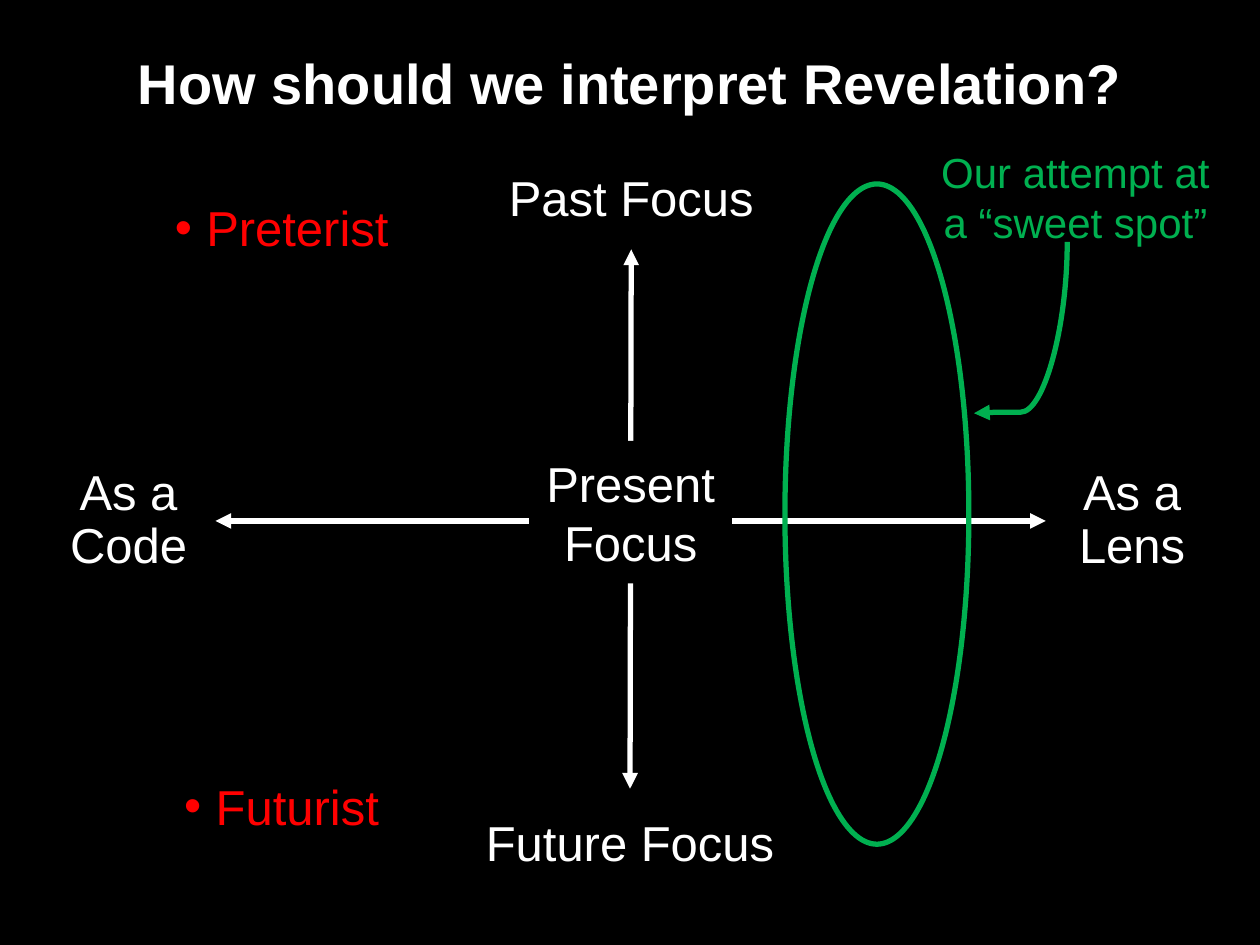
from dataclasses import dataclass

from lxml.etree import SubElement
from pptx import Presentation
from pptx.dml.color import RGBColor
from pptx.enum.shapes import MSO_CONNECTOR, MSO_SHAPE
from pptx.enum.text import MSO_ANCHOR, PP_ALIGN
from pptx.oxml.ns import qn
from pptx.util import Inches, Pt


@dataclass(frozen=True)
class Theme:
    font: str = "Arial"
    background: RGBColor = RGBColor(0, 0, 0)
    text: RGBColor = RGBColor(255, 255, 255)
    view: RGBColor = RGBColor(255, 0, 0)
    highlight: RGBColor = RGBColor(0, 0xB0, 0x50)
    title_size: Pt = Pt(32)
    label_size: Pt = Pt(28)
    note_size: Pt = Pt(24)
    line_width: Pt = Pt(3)


theme = Theme()


def write(shape, text, color=theme.text, size=theme.label_size, bold=False,
          line_spacing=None, space_after=Pt(6), bullet=False):
    frame = shape.text_frame
    frame.word_wrap = True
    frame.vertical_anchor = MSO_ANCHOR.MIDDLE
    paragraph = frame.paragraphs[0]
    paragraph.alignment = PP_ALIGN.CENTER
    paragraph.line_spacing = line_spacing
    paragraph.space_after = space_after
    if bullet:
        properties = paragraph._p.get_or_add_pPr()
        properties.set("marL", str(Inches(0.25)))
        properties.set("indent", str(Inches(-0.25)))
        SubElement(properties, qn("a:buFont"), typeface=theme.font)
        SubElement(properties, qn("a:buChar"), char="•")
    run = paragraph.add_run()
    run.text = text
    run.font.name = theme.font
    run.font.size = size
    run.font.bold = bold
    run.font.color.rgb = color


def style_arrow(connector, color, ends):
    connector.line.color.rgb = color
    connector.line.width = theme.line_width
    line = connector.line._get_or_add_ln()
    for end in ends:
        SubElement(line, qn(f"a:{end}"), type="triangle")
    SubElement(connector._element.spPr, qn("a:effectLst"))


presentation = Presentation()
presentation.slide_width = Inches(10)
presentation.slide_height = Inches(7.5)
slide = presentation.slides.add_slide(presentation.slide_layouts[6])
slide.background.fill.solid()
slide.background.fill.fore_color.rgb = theme.background
shapes = slide.shapes

title = shapes.add_textbox(Inches(0.69), Inches(0.24), Inches(8.62), Inches(0.89))
write(title, "How should we interpret Revelation?", size=theme.title_size,
      bold=True, line_spacing=0.9, space_after=Pt(0))

axis_labels = {}
for text, left, top, width, height, line_spacing in [
    ("As a Code", 0.33, 3.62, 1.38, 1.03, 0.9),
    ("As a Lens", 8.3, 3.62, 1.37, 1.03, 0.9),
    ("Future Focus", 3.53, 6.26, 2.94, 0.84, None),
    ("Past Focus", 3.54, 1.14, 2.94, 0.84, None),
]:
    label = shapes.add_textbox(Inches(left), Inches(top), Inches(width), Inches(height))
    write(label, text, line_spacing=line_spacing)
    axis_labels[text] = label

for start, start_side, finish, finish_side in [
    ("As a Lens", 1, "As a Code", 3),
    ("Past Focus", 2, "Future Focus", 0),
]:
    axis = shapes.add_connector(MSO_CONNECTOR.STRAIGHT, 0, 0, 0, 0)
    axis.begin_connect(axis_labels[start], start_side)
    axis.end_connect(axis_labels[finish], finish_side)
    style_arrow(axis, theme.text, ["headEnd", "tailEnd"])

present = shapes.add_shape(MSO_SHAPE.RECTANGLE, Inches(4.2), Inches(3.5),
                           Inches(1.61), Inches(1.13))
present.shadow.inherit = False
present.fill.solid()
present.fill.fore_color.rgb = theme.background
present.line.fill.background()
write(present, "Present Focus")

for text, top in [("Preterist", 1.24), ("Futurist", 5.83)]:
    view = shapes.add_textbox(Inches(1.22), Inches(top), Inches(2.03), Inches(1.13))
    write(view, text, color=theme.view, bullet=True)

sweet_spot = shapes.add_shape(MSO_SHAPE.OVAL, Inches(4.34), Inches(3.35),
                              Inches(5.24), Inches(1.46))
sweet_spot.rotation = 270
sweet_spot.shadow.inherit = False
sweet_spot.fill.background()
sweet_spot.line.color.rgb = theme.highlight
sweet_spot.line.width = theme.line_width

note = shapes.add_textbox(Inches(7.29), Inches(0.94), Inches(2.49), Inches(1.24))
write(note, "Our attempt at a “sweet spot”", color=theme.highlight, size=theme.note_size)

pointer = shapes.add_connector(MSO_CONNECTOR.CURVE, Inches(7.42), Inches(2.23),
                               Inches(8.78), Inches(2.97))
pointer.rotation = 90
adjustments = pointer._element.spPr.find(qn("a:prstGeom")).get_or_add_avLst()
SubElement(adjustments, qn("a:gd"), name="adj1", fmla="val 99400")
style_arrow(pointer, theme.highlight, ["tailEnd"])

presentation.save("out.pptx")
